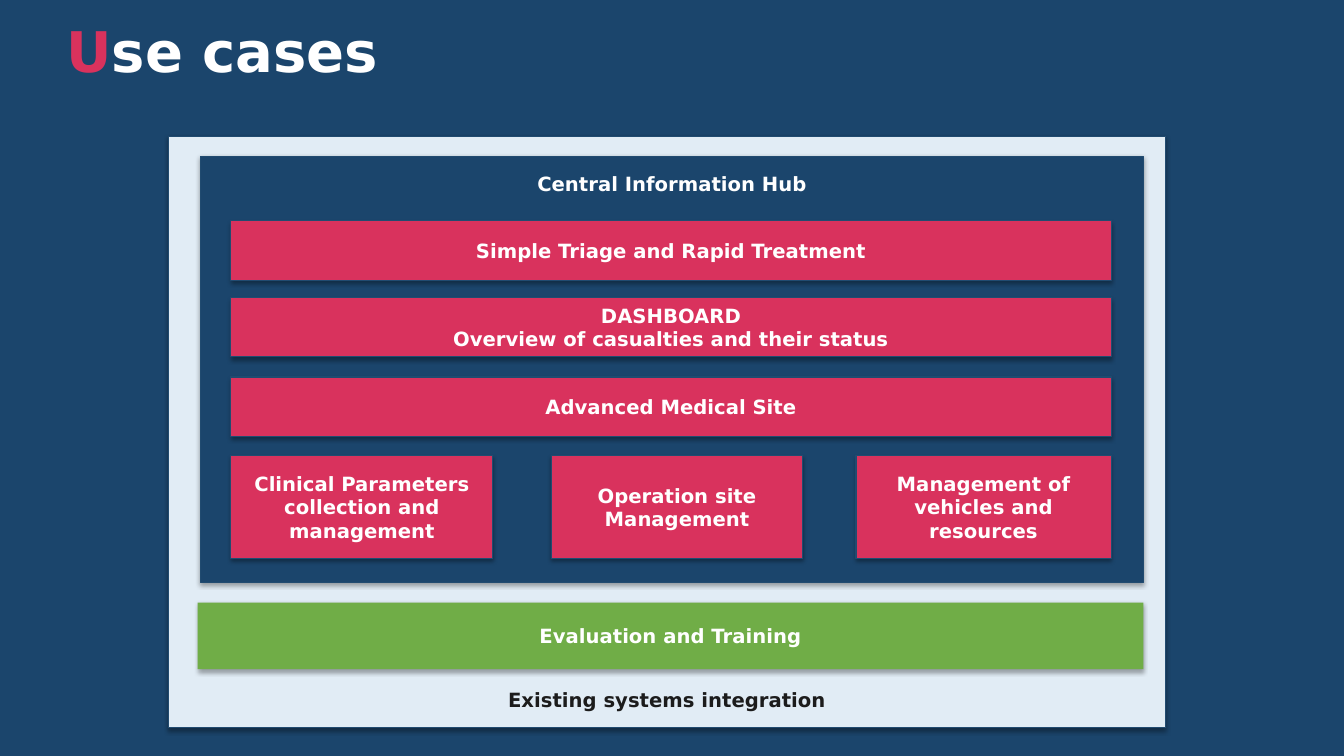
from collections import namedtuple

from lxml import etree
from pptx import Presentation
from pptx.dml.color import RGBColor
from pptx.enum.shapes import MSO_SHAPE as Preset
from pptx.enum.text import MSO_ANCHOR as Anchor, MSO_AUTO_SIZE as AutoSize, PP_ALIGN as Align
from pptx.oxml.ns import qn
from pptx.util import Inches, Pt

NAVY = RGBColor(0x1B, 0x45, 0x6C)
OUTLINE = RGBColor(0x21, 0x4B, 0x70)
PALE = RGBColor(0xE1, 0xEC, 0xF5)
CRIMSON = RGBColor(0xD9, 0x32, 0x5D)
GREEN = RGBColor(0x70, 0xAD, 0x47)
WHITE = RGBColor(0xFF, 0xFF, 0xFF)
INK = RGBColor(0x1C, 0x1C, 0x1C)
FONT = "DejaVu Sans"

Box = namedtuple("Box", "left top width height")  # inches


def inner(box, left, top, width, height):
    """Box at an offset from the corner of another box."""
    return Box(box.left + left, box.top + top, width, height)


def add_span(para, text, size, color):
    span = para.add_run()
    span.text = text
    span.font.name = FONT
    span.font.size = Pt(size)
    span.font.bold = True
    span.font.color.rgb = color


def add_soft_shadow(shape):
    effects = etree.SubElement(shape._element.spPr, qn("a:effectLst"))
    shadow = etree.SubElement(effects, qn("a:outerShdw"), blurRad=str(Pt(3.1)),
                              dist=str(Pt(1.8)), dir=str(90 * 60000), rotWithShape="0")
    color = etree.SubElement(shadow, qn("a:srgbClr"), val="000000")
    etree.SubElement(color, qn("a:alpha"), val="34000")


def add_panel(slide, box, fill, lines, color=WHITE, anchor=Anchor.MIDDLE, outlined=True):
    """Shadowed rectangle with centred bold lines of text."""
    panel = slide.shapes.add_shape(Preset.RECTANGLE, *map(Inches, box))
    panel.fill.solid()
    panel.fill.fore_color.rgb = fill
    if outlined:
        panel.line.color.rgb = OUTLINE
        panel.line.width = Pt(0.75)
    else:
        panel.line.fill.background()
    add_soft_shadow(panel)

    frame = panel.text_frame
    frame.word_wrap = True
    frame.vertical_anchor = anchor
    frame.margin_left = frame.margin_right = Inches(0.1)
    frame.margin_top = Inches(0.16 if anchor == Anchor.TOP else 0.05)
    frame.margin_bottom = Inches(0.16 if anchor == Anchor.BOTTOM else 0.05)
    for index, text in enumerate(lines):
        para = frame.add_paragraph() if index else frame.paragraphs[0]
        para.alignment = Align.CENTER
        add_span(para, text, 14, color)


def add_title(slide, box):
    title = slide.shapes.title
    title.left, title.top, title.width, title.height = map(Inches, box)
    frame = title.text_frame
    frame.margin_left = frame.margin_right = frame.margin_top = frame.margin_bottom = 0
    frame.vertical_anchor = Anchor.TOP
    frame.auto_size = AutoSize.NONE
    para = frame.paragraphs[0]
    para.alignment = Align.LEFT
    para.line_spacing = 0.9
    add_span(para, "U", 40, CRIMSON)
    add_span(para, "se cases", 40, WHITE)


def add_hub(slide, box):
    """Central hub: three full-width bars above a row of cards."""
    add_panel(slide, box, NAVY, ["Central Information Hub"], anchor=Anchor.TOP)

    # Bars
    bars = [
        (0.64, ["Simple Triage and Rapid Treatment"]),
        (1.4, ["DASHBOARD", "Overview of casualties and their status"]),
        (2.19, ["Advanced Medical Site"]),
    ]
    for top, lines in bars:
        add_panel(slide, inner(box, 0.3, top, 8.73, 0.59), CRIMSON, lines)

    # Cards
    cards = [
        (0.3, 2.6, "Clinical Parameters collection and management"),
        (3.48, 2.49, "Operation site Management"),
        (6.5, 2.53, "Management of vehicles and resources"),
    ]
    for left, width, text in cards:
        add_panel(slide, inner(box, left, 2.97, width, 1.02), CRIMSON, [text])


def add_systems(slide, box):
    """Outer frame holding the hub and the training bar."""
    add_panel(slide, box, PALE, ["Existing systems integration"], INK, Anchor.BOTTOM)
    add_hub(slide, inner(box, 0.32, 0.2, 9.35, 4.23))
    add_panel(slide, inner(box, 0.29, 4.63, 9.38, 0.66), GREEN,
              ["Evaluation and Training"], outlined=False)


def main():
    deck = Presentation()
    deck.slide_width, deck.slide_height = Inches(13.33), Inches(7.5)
    slide = deck.slides.add_slide(deck.slide_layouts.get_by_name("Title Only"))
    slide.background.fill.solid()
    slide.background.fill.fore_color.rgb = NAVY
    add_title(slide, Box(0.66, 0.24, 9, 0.75))
    add_systems(slide, Box(1.67, 1.35, 9.89, 5.87))
    deck.save("out.pptx")


if __name__ == "__main__":
    main()
